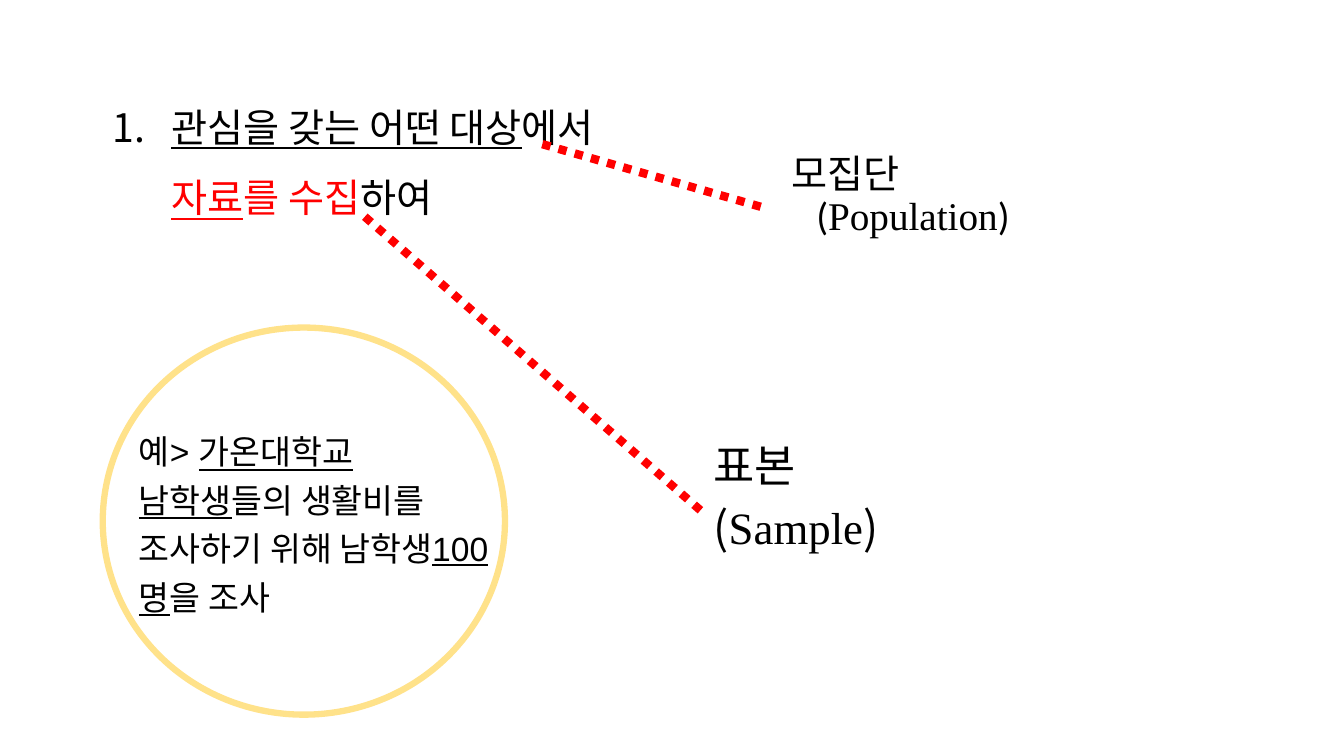
from lxml.etree import SubElement
from pptx import Presentation
from pptx.dml.color import RGBColor
from pptx.enum.dml import MSO_LINE_DASH_STYLE as Dash
from pptx.enum.shapes import MSO_CONNECTOR as Connector, MSO_SHAPE as Shape
from pptx.oxml.ns import qn
from pptx.util import Pt

COLORS = {"ink": "000000", "accent": "FF0000", "ring": "FFC000"}
KOREAN, SANS, SERIF = "Noto Sans CJK KR", "Arial", "Times New Roman"


def color(name):
    return RGBColor.from_string(COLORS[name])


def add_text(slide, box, paragraphs, size, font, line_spacing=1.0,
             space_before=None, indent=0, numbered=False):
    frame = slide.shapes.add_textbox(*map(Pt, box)).text_frame
    frame.word_wrap = True
    for index, pieces in enumerate(paragraphs):
        paragraph = frame.add_paragraph() if index else frame.paragraphs[0]
        paragraph.line_spacing = line_spacing
        paragraph.space_before = Pt(size * 0.2 if space_before is None else space_before)
        properties = paragraph._p.get_or_add_pPr()
        properties.set("marL", str(Pt(indent)))
        properties.set("indent", str(Pt(-indent)))
        if numbered:
            SubElement(properties, qn("a:buFont"), typeface=KOREAN)
            SubElement(properties, qn("a:buAutoNum"), type="arabicPeriod")
        for wording, style in pieces:
            run = paragraph.add_run()
            run.text = wording
            run.font.size = Pt(size)
            run.font.name = style.get("font", font)
            run.font.underline = style.get("underline", False)
            run.font.color.rgb = color(style.get("color", "ink"))
            SubElement(run._r.get_or_add_rPr(), qn("a:ea"), typeface=KOREAN)


def add_step(slide, box):
    add_text(slide, box, [[
        ("관심을 갖는 어떤 대상", {"underline": True}),
        ("에서 ", {}),
        ("자료", {"underline": True, "color": "accent"}),
        ("를 수집", {"color": "accent"}),
        ("하여", {}),
    ]], size=28, font=SANS, line_spacing=1.5, indent=42, numbered=True)


def add_population(slide, box):
    add_text(slide, box, [[
        ("모집단 ", {"font": KOREAN}),
        ("(", {}),
        ("Population", {"font": SERIF}),
        (")", {}),
    ]], size=28, font="Calibri", line_spacing=0.9, space_before=10, indent=18)


def add_sample(slide, box):
    add_text(slide, box, [
        [("표본", {})],
        [("(", {}), ("Sample", {"font": SERIF}), (")", {})],
    ], size=32, font=KOREAN, indent=27)


def add_example(slide, box):
    left, top, width, height = box
    ring = slide.shapes.add_shape(Shape.OVAL, *map(Pt, box))
    ring.shadow.inherit = False
    ring.fill.background()
    ring.line.width = Pt(4.5)
    ring.line.color.rgb = color("ring")
    ring_color = ring.line._ln.find(".//" + qn("a:srgbClr"))
    SubElement(ring_color, qn("a:alpha"), val="45000")

    inset, drop = 18.8, 64.8
    add_text(slide, (left + inset, top + drop, width - inset, 175.7), [[
        ("예> ", {}),
        ("가온대학교 남학생", {"underline": True}),
        ("들의 생활비를 조사하기 위해 남학생", {}),
        ("100명", {"underline": True}),
        ("을 조사", {}),
    ]], size=24, font=SANS, line_spacing=1.2)


def add_dotted_link(slide, start, end):
    link = slide.shapes.add_connector(Connector.STRAIGHT, *map(Pt, start + end))
    link.line.color.rgb = color("accent")
    link.line.width = Pt(6)
    link.line.dash_style = Dash.ROUND_DOT
    SubElement(link._element.spPr, qn("a:effectLst"))


def main():
    deck = Presentation()
    deck.slide_width, deck.slide_height = Pt(960), Pt(540)
    slide = deck.slides.add_slide(deck.slide_layouts[6])
    add_population(slide, (558, 106.6, 208.8, 96.5))
    add_step(slide, (73.4, 53.3, 369.4, 263.5))
    add_sample(slide, (502.6, 308.9, 262.8, 128.9))
    add_dotted_link(slide, (387.4, 103), (547.9, 149))
    add_dotted_link(slide, (260.6, 154.8), (502.6, 366.5))
    add_example(slide, (73.4, 234, 287.3, 276.5))
    deck.save("out.pptx")


if __name__ == "__main__":
    main()
